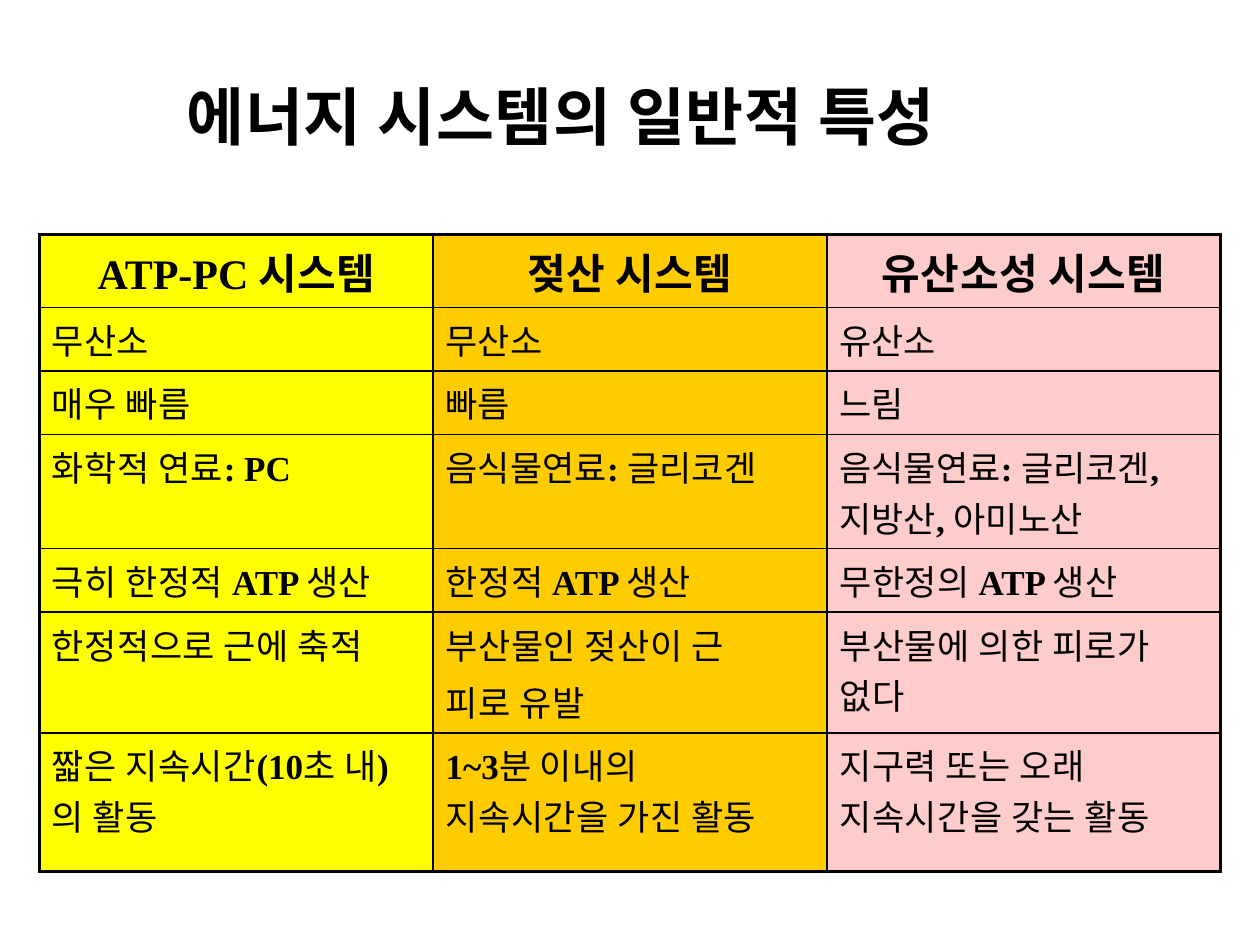
import itertools

import lxml.etree
import pptx
import pptx.dml.color
import pptx.enum.text
import pptx.oxml.ns
import pptx.util

Pt = pptx.util.Pt
Color = pptx.dml.color.RGBColor


class Theme:
    black = Color(0x00, 0x00, 0x00)
    columns = [Color(0xFF, 0xFF, 0x00), Color(0xFF, 0xCC, 0x00), Color(0xFF, 0xCC, 0xCC)]
    right_margins = [7.2, 12, 7.2]
    korean_font = "Noto Sans CJK KR"
    latin_font = "Times New Roman"
    title_size = 36
    header_size = 24
    body_size = 20
    outer_line = 2.25
    inner_line = 1


TITLE = "에너지 시스템의 일반적 특성"
ROWS = [
    ["ATP-PC 시스템", "젖산 시스템", "유산소성 시스템"],
    ["무산소", "무산소", "유산소"],
    ["매우 빠름", "빠름", "느림"],
    ["화학적 연료: PC", "음식물연료: 글리코겐", "음식물연료: 글리코겐, 지방산, 아미노산"],
    ["극히 한정적 ATP 생산", "한정적 ATP 생산", "무한정의 ATP 생산"],
    ["한정적으로 근에 축적", "부산물인 젖산이 근\n피로 유발", "부산물에 의한 피로가 없다"],
    ["짧은 지속시간(10초 내)의 활동", "1~3분 이내의 지속시간을 가진 활동",
     "지구력 또는 오래 지속시간을 갖는 활동"],
]
ROW_HEIGHTS = [41.7, 36.3, 36.3, 65.2, 36.3, 69.1, 79.2]


def split_scripts(text):
    """Yield (is_latin, part) pairs; a space stays with the script before it."""
    flags = []
    for character in text:
        flags.append(flags[-1] if character == " " else character.isascii())
    for is_latin, group in itertools.groupby(zip(flags, text), key=lambda pair: pair[0]):
        yield is_latin, "".join(character for _, character in group)


class SlideBuilder:
    def __init__(self, slide, theme):
        self.slide = slide
        self.theme = theme

    def style_run(self, run, font_name, size, bold):
        font = run.font
        font.name = font_name
        font.size = Pt(size)
        font.bold = bold
        font.color.rgb = self.theme.black
        properties = run._r.get_or_add_rPr()
        east_asian = lxml.etree.SubElement(properties, pptx.oxml.ns.qn("a:ea"))
        east_asian.set("typeface", font_name)
        if font_name == self.theme.korean_font and " " in run.text:
            # Slightly open tracking for Korean phrases, in hundredths of a point
            properties.set("spc", str(round(size * 1.25)))

    def title(self, text, left, top, width, height):
        text_frame = self.slide.shapes.add_textbox(
            Pt(left), Pt(top), Pt(width), Pt(height)).text_frame
        text_frame.word_wrap = True
        text_frame.vertical_anchor = pptx.enum.text.MSO_ANCHOR.MIDDLE
        text_frame.text = text
        self.style_run(text_frame.paragraphs[0].runs[0], self.theme.korean_font,
                       self.theme.title_size, True)

    def cell_text(self, cell, text, is_header):
        size = self.theme.header_size if is_header else self.theme.body_size
        cell.text_frame.text = text
        for paragraph in cell.text_frame.paragraphs:
            parts = list(split_scripts(paragraph.text))
            paragraph.clear()
            paragraph.space_before = Pt(size * 0.2)
            if is_header:
                paragraph.alignment = pptx.enum.text.PP_ALIGN.CENTER
            for is_latin, part in parts:
                run = paragraph.add_run()
                run.text = part
                font_name = self.theme.latin_font if is_latin else self.theme.korean_font
                self.style_run(run, font_name, size, is_header or is_latin)

    def cell_borders(self, cell, outer_sides):
        """Draw all four sides, with the heavier line on the table's edge."""
        properties = cell._tc.get_or_add_tcPr()
        for side, is_outer in outer_sides.items():
            width = self.theme.outer_line if is_outer else self.theme.inner_line
            line = lxml.etree.SubElement(properties, pptx.oxml.ns.qn("a:ln" + side))
            line.set("w", str(Pt(width)))
            fill = lxml.etree.SubElement(line, pptx.oxml.ns.qn("a:solidFill"))
            color = lxml.etree.SubElement(fill, pptx.oxml.ns.qn("a:srgbClr"))
            color.set("val", str(self.theme.black))

    def table(self, rows, row_heights, left, top, width):
        column_count = len(rows[0])
        table = self.slide.shapes.add_table(
            len(rows), column_count, Pt(left), Pt(top), Pt(width), Pt(sum(row_heights))).table
        for column in table.columns:
            column.width = Pt(width / column_count)
        for row_index, (texts, height) in enumerate(zip(rows, row_heights)):
            table.rows[row_index].height = Pt(height)
            is_header = row_index == 0
            for column_index, text in enumerate(texts):
                cell = table.cell(row_index, column_index)
                self.cell_text(cell, text, is_header)
                if not is_header:
                    cell.margin_right = Pt(self.theme.right_margins[column_index])
                self.cell_borders(cell, {
                    "L": column_index == 0,
                    "R": column_index == column_count - 1,
                    "T": is_header,
                    "B": row_index == len(rows) - 1,
                })
                cell.fill.solid()
                cell.fill.fore_color.rgb = self.theme.columns[column_index]


def main():
    presentation = pptx.Presentation()
    presentation.slide_width = Pt(720)
    presentation.slide_height = Pt(540)
    slide = presentation.slides.add_slide(presentation.slide_layouts[6])
    builder = SlideBuilder(slide, Theme())
    builder.title(TITLE, left=99.4, top=37.4, width=491, height=56.9)
    builder.table(ROWS, ROW_HEIGHTS, left=22.5, top=134, width=675)
    presentation.save("out.pptx")


if __name__ == "__main__":
    main()
